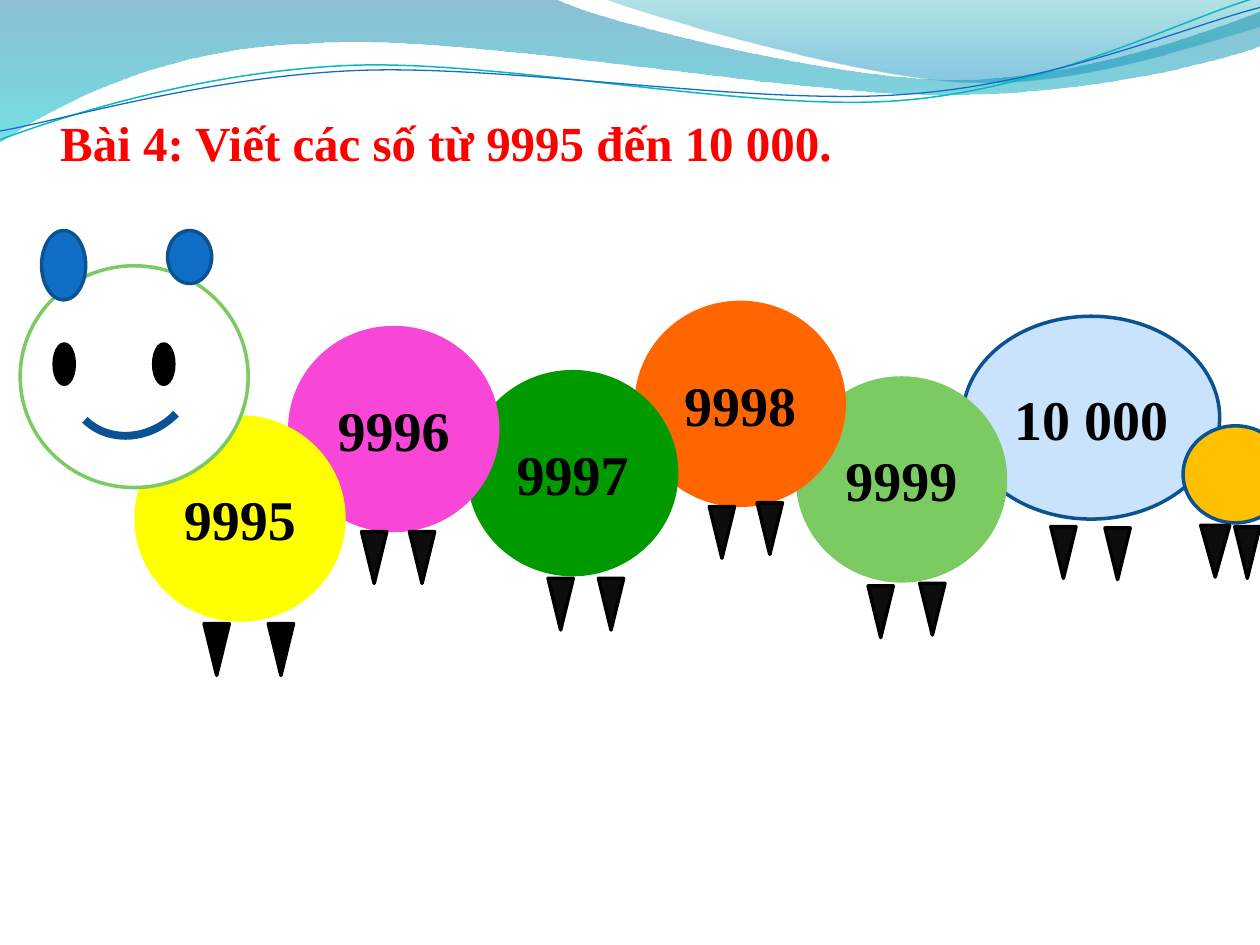
from math import cos, radians, sin

from lxml.etree import SubElement
from pptx import Presentation
from pptx.dml.color import RGBColor
from pptx.enum.shapes import MSO_SHAPE
from pptx.enum.text import MSO_ANCHOR, PP_ALIGN
from pptx.oxml.ns import qn
from pptx.util import Inches, Pt

FONT = "Times New Roman"
BLACK = "000000"
NAVY = "0B5292"
GREEN = "7CCA62"
STRAND_TILT = -2.7

TOP_WAVE = [
    (0, 0), (4.4, -0.01),
    (4.76, 0.17, 6.64, 0.63, 7.58, 0.63), (8.53, 0.63, 9.58, 0.26, 10, 0.09),
    (10.01, 0.36),
    (9.83, 0.44, 8.7, 0.76, 7.46, 0.75), (6.22, 0.75, 3.82, 0.28, 2.57, 0.34),
    (1.29, 0.36, 0.46, 0.83, -0.01, 1.13),
]
RIGHT_WAVE = [
    (4.79, -0.01),
    (5.09, 0.11, 6.82, 0.62, 7.69, 0.65), (8.56, 0.69, 9.61, 0.32, 10, 0.21),
    (10, 0),
]
TEAL_STRAND = [
    (0, 1.11),
    (0.48, 0.93, 1.58, 0.57, 2.77, 0.52), (3.95, 0.47, 5.93, 0.89, 7.13, 0.8),
    (8.33, 0.71, 9.38, 0.15, 9.98, -0.02),
]
BLUE_STRAND = [
    (0, 1.04),
    (0.47, 0.96, 1.64, 0.61, 2.83, 0.56), (4.03, 0.51, 5.97, 0.84, 7.17, 0.75),
    (8.36, 0.67, 9.41, 0.21, 10, 0.06),
]
NUMBERED_CIRCLES = [
    ("9999", 6.33, 3, GREEN),
    ("9998", 5.05, 2.4, "FF6600"),
    ("9997", 3.72, 2.95, "009900"),
    ("9996", 2.3, 2.6, "F846D6"),
    ("9995", 1.08, 3.31, "FFFF00"),
]
FRONT_LEGS = [(1.62, 4.95), (2.13, 4.95)]
OTHER_LEGS = [
    (3.25, 4.22), (2.87, 4.22), (4.75, 4.59), (8.77, 4.19), (9.8, 4.18), (7.3, 4.63),
    (6.89, 4.65), (8.34, 4.18), (5.63, 4.02), (6.01, 3.99), (4.35, 4.59),
]


def color(value):
    return RGBColor.from_string(value)


def set_line(shape, value, width):
    shape.line.color.rgb = color(value)
    shape.line.width = Pt(width)


def write(box, text, size, text_color=BLACK, align=PP_ALIGN.LEFT,
          anchor=MSO_ANCHOR.TOP, space_before=0):
    frame = box.text_frame
    frame.word_wrap = True
    frame.vertical_anchor = anchor
    para = frame.paragraphs[0]
    para.alignment = align
    para.space_before = Pt(space_before)
    span = para.add_run()
    span.text = text
    span.font.name = FONT
    span.font.size = Pt(size)
    span.font.bold = True
    span.font.color.rgb = color(text_color)


def add_preset(page, kind, left, top, width, height, fill, line=BLACK, line_width=2):
    shape = page.shapes.add_shape(
        kind, Inches(left), Inches(top), Inches(width), Inches(height))
    shape.shadow.inherit = False
    if fill:
        shape.fill.solid()
        shape.fill.fore_color.rgb = color(fill)
    else:
        shape.fill.background()
    set_line(shape, line, line_width)
    return shape


def add_ellipse(page, left, top, width, height, fill, line, label=""):
    shape = add_preset(page, MSO_SHAPE.OVAL, left, top, width, height, fill, line)
    if label:
        write(shape, label, 32, align=PP_ALIGN.CENTER, anchor=MSO_ANCHOR.MIDDLE)


def add_leg(page, left, top, width=0.2, fill="0D0D0D"):
    add_preset(page, MSO_SHAPE.FLOWCHART_MERGE, left, top, width, 0.41, fill)


def turn(segment, degrees, center=(5, 0.58)):
    angle = radians(degrees)
    turned = []
    for x, y in zip(segment[::2], segment[1::2]):
        across, down = x - center[0], y - center[1]
        turned += [center[0] + across * cos(angle) - down * sin(angle),
                   center[1] + across * sin(angle) + down * cos(angle)]
    return turned


def bend(shape, segments):
    nodes = iter(list(shape._element.iter(qn("a:lnTo"))))
    for segment in segments[1:]:
        node = next(nodes)
        if len(segment) == 6:
            node.tag = qn("a:cubicBezTo")
            for extra in (next(nodes), next(nodes)):
                node.append(extra[0])
                extra.getparent().remove(extra)


def add_outline(page, segments, close):
    points = [(Inches(x), Inches(y)) for segment in segments
              for x, y in zip(segment[::2], segment[1::2])]
    builder = page.shapes.build_freeform(*points[0])
    builder.add_line_segments(points[1:], close=close)
    shape = builder.convert_to_shape()
    shape.shadow.inherit = False
    bend(shape, segments)
    return shape


def add_wave(page, segments, stops):
    shape = add_outline(page, segments, close=True)
    shape.line.fill.background()
    shape.fill.gradient()
    shape.fill.gradient_angle = 270
    for stop, (position, value, opacity) in zip(shape.fill.gradient_stops, stops):
        stop.position = position
        stop.color.rgb = color(value)
    tints = shape.fill._xPr.iter(qn("a:srgbClr"))
    for tint, (position, value, opacity) in zip(tints, stops):
        SubElement(tint, qn("a:alpha"), val=str(opacity * 1000))


def add_strand(page, segments, value, width):
    level = [turn(segment, -STRAND_TILT) for segment in segments]
    shape = add_outline(page, level, close=False)
    shape.rotation = STRAND_TILT
    shape.fill.background()
    set_line(shape, value, width)


def add_background(page):
    add_wave(page, TOP_WAVE, [(0, "0074A1", 45), (1, "00C6CF", 55)])
    add_wave(page, RIGHT_WAVE, [(0, "00A1A9", 30), (0.8, "008BBF", 45)])
    add_strand(page, TEAL_STRAND, "0AB8BF", 0.85)
    add_strand(page, BLUE_STRAND, "0F6FC6", 0.75)


def add_title(page, text):
    box = page.shapes.add_textbox(Inches(0.38), Inches(0.84), Inches(9.37), Inches(5.86))
    write(box, text, 28, text_color="FF0000", space_before=5)


def add_body(page):
    add_ellipse(page, 7.64, 2.51, 2.04, 1.61, "C8E3FB", NAVY, "10 000")
    for label, left, top, fill in NUMBERED_CIRCLES:
        add_ellipse(page, left, top, 1.65, 1.61, fill, fill, label)
    add_ellipse(page, 0.16, 2.11, 1.81, 1.76, "FFFFFF", GREEN)
    add_ellipse(page, 9.39, 3.38, 0.83, 0.77, "FFC000", NAVY)


def add_legs(page):
    for left, top in FRONT_LEGS:
        add_leg(page, left, top, fill=BLACK)
    for left, top in OTHER_LEGS:
        add_leg(page, left, top)
    add_leg(page, 9.53, 4.17, width=0.23)


def add_face(page):
    for left in (0.43, 1.22):
        add_ellipse(page, left, 2.73, 0.16, 0.32, BLACK, BLACK)
    smile = add_preset(page, MSO_SHAPE.ARC, 0.51, 2.46, 1.08, 0.97, None, "095295", 4.5)
    smile.rotation = 134.2
    for left, height in ((0.33, 0.55), (1.33, 0.42)):
        add_ellipse(page, left, 1.83, 0.35, height, "0F6FC6", NAVY)


def main():
    deck = Presentation()
    deck.slide_width = Inches(10)
    deck.slide_height = Inches(7.5)
    page = deck.slides.add_slide(deck.slide_layouts[6])
    add_background(page)
    add_title(page, "Bài 4: Viết các số từ 9995 đến 10 000.")
    add_body(page)
    add_legs(page)
    add_face(page)
    deck.save("out.pptx")


if __name__ == "__main__":
    main()
